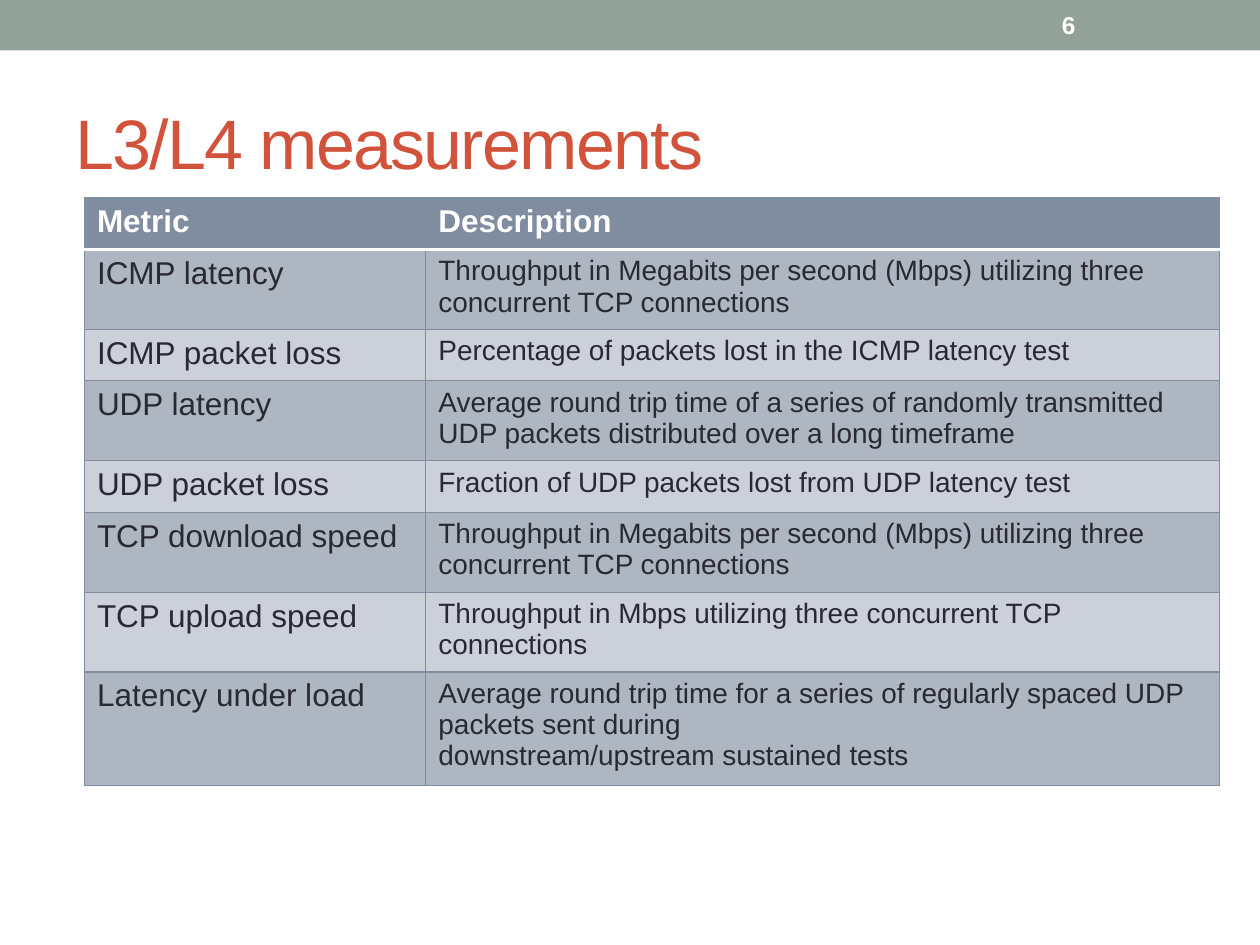
from dataclasses import dataclass

import lxml.etree
import pptx
import pptx.dml.color
import pptx.enum.shapes
import pptx.enum.text
import pptx.oxml.ns
import pptx.util

Inches = pptx.util.Inches
Pt = pptx.util.Pt
RGBColor = pptx.dml.color.RGBColor
MIDDLE = pptx.enum.text.MSO_ANCHOR.MIDDLE

SAGE = RGBColor(0x93, 0xA2, 0x99)
RUST = RGBColor(0xD2, 0x53, 0x3C)
SLATE = RGBColor(0x80, 0x8D, 0xA0)
DARK_BAND = RGBColor(0xAE, 0xB6, 0xC2)
LIGHT_BAND = RGBColor(0xCC, 0xD1, 0xD9)
INK = RGBColor(0x29, 0x29, 0x34)
WHITE = RGBColor(0xFF, 0xFF, 0xFF)
FONT = "Arial"
ROW_HEIGHT = 0.41
COLUMN_WIDTHS = (2.71, 6.3)


@dataclass
class Metric:
    name: str
    description: tuple[str, ...]


@dataclass
class TextStyle:
    size: float
    color: RGBColor
    bold: bool = False


METRICS = [
    Metric("ICMP latency", (
        "Throughput in Megabits per second (Mbps) utilizing three concurrent TCP connections",)),
    Metric("ICMP packet loss", ("Percentage of packets lost in the ICMP latency test",)),
    Metric("UDP latency", (
        "Average round trip time of a series of randomly transmitted UDP packets "
        "distributed over a long timeframe",)),
    Metric("UDP packet loss", ("Fraction of UDP packets lost from UDP latency test",)),
    Metric("TCP download speed", (
        "Throughput in Megabits per second (Mbps) utilizing three concurrent TCP connections",)),
    Metric("TCP upload speed", ("Throughput in Mbps utilizing three concurrent TCP connections",)),
    Metric("Latency under load", (
        "Average round trip time for a series of regularly spaced UDP packets sent during",
        "downstream/upstream sustained tests")),
]
HEADER_STYLE = TextStyle(18, WHITE, True)
NAME_STYLE = TextStyle(18, INK)
DESCRIPTION_STYLE = TextStyle(16, INK)


def add_run(paragraph, text: str, style: TextStyle):
    run = paragraph.add_run()
    run.text = text
    run.font.name = FONT
    run.font.size = Pt(style.size)
    run.font.bold = style.bold
    run.font.color.rgb = style.color
    return run


def add_border(cell, side: str, color: RGBColor, width: float) -> None:
    qn = pptx.oxml.ns.qn
    line = lxml.etree.SubElement(
        cell._tc.get_or_add_tcPr(), qn(f"a:ln{side}"), w=str(int(Pt(width))))
    fill = lxml.etree.SubElement(line, qn("a:solidFill"))
    lxml.etree.SubElement(fill, qn("a:srgbClr"), val=str(color))


def fill_cell(cell, lines: tuple[str, ...], style: TextStyle, fill: RGBColor,
              top: tuple[RGBColor, float], bottom: tuple[RGBColor, float]) -> None:
    for index, line in enumerate(lines):
        frame = cell.text_frame
        paragraph = frame.add_paragraph() if index else frame.paragraphs[0]
        add_run(paragraph, line, style)
    thin = (SLATE, 0.75)
    for side, border in (("L", thin), ("R", thin), ("T", top), ("B", bottom)):
        add_border(cell, side, *border)
    cell.fill.solid()
    cell.fill.fore_color.rgb = fill


def add_metric_table(slide) -> None:
    row_count = len(METRICS) + 1
    table = slide.shapes.add_table(
        row_count, len(COLUMN_WIDTHS), Inches(0.67), Inches(1.57),
        Inches(sum(COLUMN_WIDTHS)), Inches(ROW_HEIGHT * row_count)).table
    table.horz_banding = False
    for column, width in zip(table.columns, COLUMN_WIDTHS):
        column.width = Inches(width)
    for row in table.rows:
        row.height = Inches(ROW_HEIGHT)

    thin, divider = (SLATE, 0.75), (WHITE, 2.08)
    for column, heading in enumerate(("Metric", "Description")):
        fill_cell(table.cell(0, column), (heading,), HEADER_STYLE, SLATE, thin, divider)
    for row, metric in enumerate(METRICS, start=1):
        band = DARK_BAND if row % 2 else LIGHT_BAND
        top = divider if row == 1 else thin
        fill_cell(table.cell(row, 0), (metric.name,), NAME_STYLE, band, top, thin)
        fill_cell(table.cell(row, 1), metric.description, DESCRIPTION_STYLE, band, top, thin)


def add_header_bar(slide) -> None:
    bar = slide.shapes.add_shape(
        pptx.enum.shapes.MSO_SHAPE.RECTANGLE, 0, 0, Inches(10), Inches(0.4))
    bar.shadow.inherit = False
    bar.fill.solid()
    bar.fill.fore_color.rgb = SAGE
    bar.line.fill.background()


def set_title(slide) -> None:
    title = slide.shapes.title
    title.left, title.top = Inches(0.5), Inches(0.58)
    title.width, title.height = Inches(9), Inches(1.08)
    title.text_frame.vertical_anchor = MIDDLE
    paragraph = title.text_frame.paragraphs[0]
    paragraph.alignment = pptx.enum.text.PP_ALIGN.LEFT
    run = add_run(paragraph, "L3/L4 measurements", TextStyle(40, RUST))
    run.font._element.set("spc", "-100")


def add_page_number(slide) -> None:
    page_number = slide.shapes.add_textbox(
        Inches(8.33), Inches(0.02), Inches(1.17), Inches(0.36))
    page_number.text_frame.word_wrap = True
    page_number.text_frame.vertical_anchor = MIDDLE
    add_run(page_number.text_frame.paragraphs[0], "6", TextStyle(14, WHITE, True))


def main() -> None:
    deck = pptx.Presentation()
    deck.slide_width, deck.slide_height = Inches(10), Inches(7.5)
    slide = deck.slides.add_slide(deck.slide_layouts[5])
    add_header_bar(slide)
    set_title(slide)
    add_page_number(slide)
    add_metric_table(slide)
    deck.save("out.pptx")


if __name__ == "__main__":
    main()
